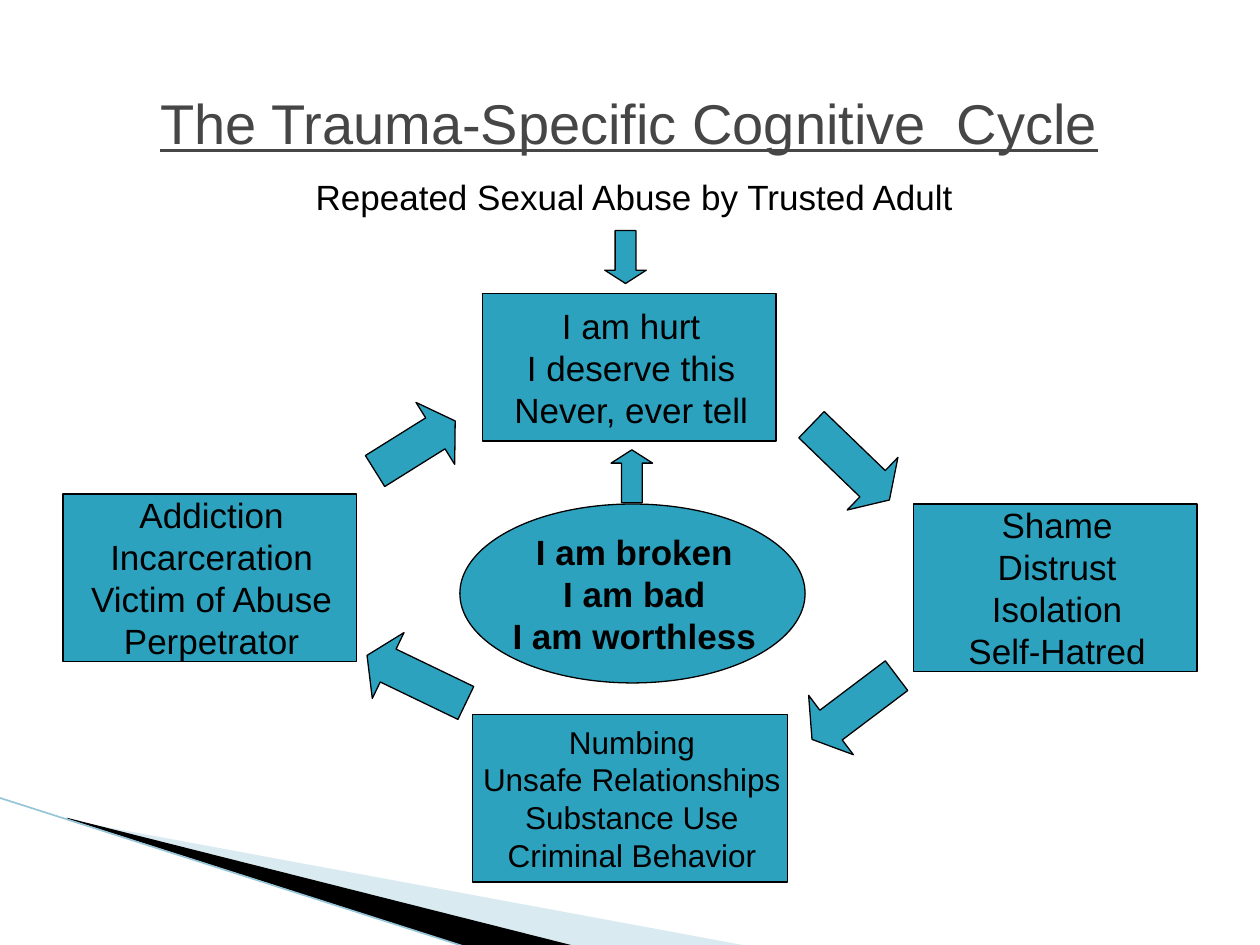
import pptx
import pptx.util
import pptx.dml.color
import pptx.enum.shapes
import pptx.enum.text
from lxml import etree

Inches, Pt = pptx.util.Inches, pptx.util.Pt
SHAPE = pptx.enum.shapes.MSO_SHAPE
TEXT = pptx.enum.text
DRAWING = "http://schemas.openxmlformats.org/drawingml/2006/main"
COLORS = {"teal": "2DA2BF", "black": "000000", "title": "464646",
          "pale": "A0CBDC", "edge": "97C5D8"}

# text, size, colour, underline, space before, left margin
HEADINGS = [
    ("The Trauma-Specific Cognitive  Cycle", 32, "title", True, 0, 0.04),
    ("Repeated Sexual Abuse by Trusted Adult", 20, "black", False, 11.5, 0.12),
]
# shape, (left, top, width, height), size, bold, lines
STAGES = [
    (SHAPE.RECTANGLE, (3.83, 2.33, 2.33, 1.17), 20, False,
     ["I am hurt", "I deserve this", "Never, ever tell"]),
    (SHAPE.RECTANGLE, (7.25, 4, 2.25, 1.33), 20, False,
     ["Shame", "Distrust", "Isolation", "Self-Hatred"]),
    (SHAPE.RECTANGLE, (3.75, 5.67, 2.5, 1.33), 18, False,
     ["Numbing", "Unsafe Relationships", "Substance Use", "Criminal Behavior"]),
    (SHAPE.RECTANGLE, (0.5, 3.92, 2.33, 1.33), 20, False,
     ["Addiction", "Incarceration", "Victim of Abuse", "Perpetrator"]),
    (SHAPE.OVAL, (3.65, 4, 2.74, 1.42), 20, True,
     ["I am broken", "I am bad", "I am worthless"]),
]
# shape, (left, top, width, height), rotation
ARROWS = [
    (SHAPE.RIGHT_ARROW, (6.32, 3.38, 0.86, 0.58), 44),
    (SHAPE.RIGHT_ARROW, (6.36, 5.32, 0.84, 0.59), 143),
    (SHAPE.RIGHT_ARROW, (2.87, 5.1, 0.87, 0.58), 205.7),
    (SHAPE.RIGHT_ARROW, (2.92, 3.25, 0.75, 0.58), 328),
    (SHAPE.UP_ARROW, (4.85, 3.57, 0.33, 0.42), 0),
    (SHAPE.DOWN_ARROW, (4.8, 1.83, 0.33, 0.42), 0),
]
# points, colour, opacity in percent
WEDGES = [
    ([(0.55, 6.51), (5.95, 7.51), (4.56, 7.51), (0.55, 6.5)], "pale", 40),
    ([(0.53, 6.49), (4.57, 7.51), (3.72, 7.52), (0.54, 6.5)], "black", 100),
]
EDGE = [(-0.01, 6.33), (3.71, 7.52)]


def rgb(name):
    return pptx.dml.color.RGBColor.from_string(COLORS[name])


def set_font(para, size, color, bold=False, underline=False):
    font = para.font
    font.name, font.size, font.bold = "Arial", Pt(size), bold
    font.underline = underline
    font.color.rgb = rgb(color)


def set_frame(frame, left, right, wrap):
    frame.margin_left, frame.margin_right = Inches(left), Inches(right)
    frame.margin_top = frame.margin_bottom = 0
    frame.word_wrap = wrap


def add_filled(page, kind, place):
    shape = page.shapes.add_shape(kind, *map(Inches, place))
    shape.shadow.inherit = False
    shape.fill.solid()
    shape.fill.fore_color.rgb = rgb("teal")
    shape.line.color.rgb = rgb("black")
    shape.line.width = Pt(0.75)
    return shape


def add_wedge(page, points, color, opacity):
    corners = [(Inches(x), Inches(y)) for x, y in points]
    builder = page.shapes.build_freeform(*corners[0])
    builder.add_line_segments(corners[1:], close=True)
    wedge = builder.convert_to_shape()
    wedge.shadow.inherit = False
    wedge.fill.solid()
    wedge.fill.fore_color.rgb = rgb(color)
    wedge.line.fill.background()
    if opacity < 100:
        tint = wedge.fill._xPr.find(f".//{{{DRAWING}}}srgbClr")
        etree.SubElement(tint, f"{{{DRAWING}}}alpha", val=str(opacity * 1000))


def add_edge(page):
    (x1, y1), (x2, y2) = EDGE
    edge = page.shapes.add_connector(
        pptx.enum.shapes.MSO_CONNECTOR.STRAIGHT, *map(Inches, (x1, y1, x2, y2)))
    edge.line.color.rgb = rgb("edge")
    edge.line.width = Pt(0.95)
    etree.SubElement(edge._element.spPr, f"{{{DRAWING}}}effectLst")


def add_stage(page, kind, place, size, bold, lines):
    frame = add_filled(page, kind, place).text_frame
    set_frame(frame, 0.03, 0, False)
    frame.vertical_anchor = TEXT.MSO_ANCHOR.MIDDLE
    frame.text = "\n".join(lines)
    for para in frame.paragraphs:
        para.alignment = TEXT.PP_ALIGN.CENTER
        set_font(para, size, "black", bold)


def add_arrow(page, kind, place, rotation):
    arrow = add_filled(page, kind, place)
    arrow.rotation = rotation
    arrow.adjustments[0], arrow.adjustments[1] = 0.5, 0.32


def add_headings(page):
    box = page.shapes.add_textbox(*map(Inches, (0.76, 0.7, 8.47, 0.96)))
    frame = box.text_frame
    set_frame(frame, 0, 0.04, True)
    frame.text = "\n".join(heading[0] for heading in HEADINGS)
    for para, heading in zip(frame.paragraphs, HEADINGS):
        _, size, color, underline, before, margin = heading
        para.alignment = TEXT.PP_ALIGN.CENTER
        para.space_before = Pt(before)
        para._p.get_or_add_pPr().set("marL", str(Inches(margin)))
        set_font(para, size, color, underline=underline)


def main():
    deck = pptx.Presentation()
    deck.slide_width, deck.slide_height = Inches(10), Inches(7.5)
    page = deck.slides.add_slide(deck.slide_layouts[6])
    for wedge in WEDGES:
        add_wedge(page, *wedge)
    add_edge(page)
    for stage in STAGES:
        add_stage(page, *stage)
    for arrow in ARROWS:
        add_arrow(page, *arrow)
    add_headings(page)
    deck.save("out.pptx")


if __name__ == "__main__":
    main()
